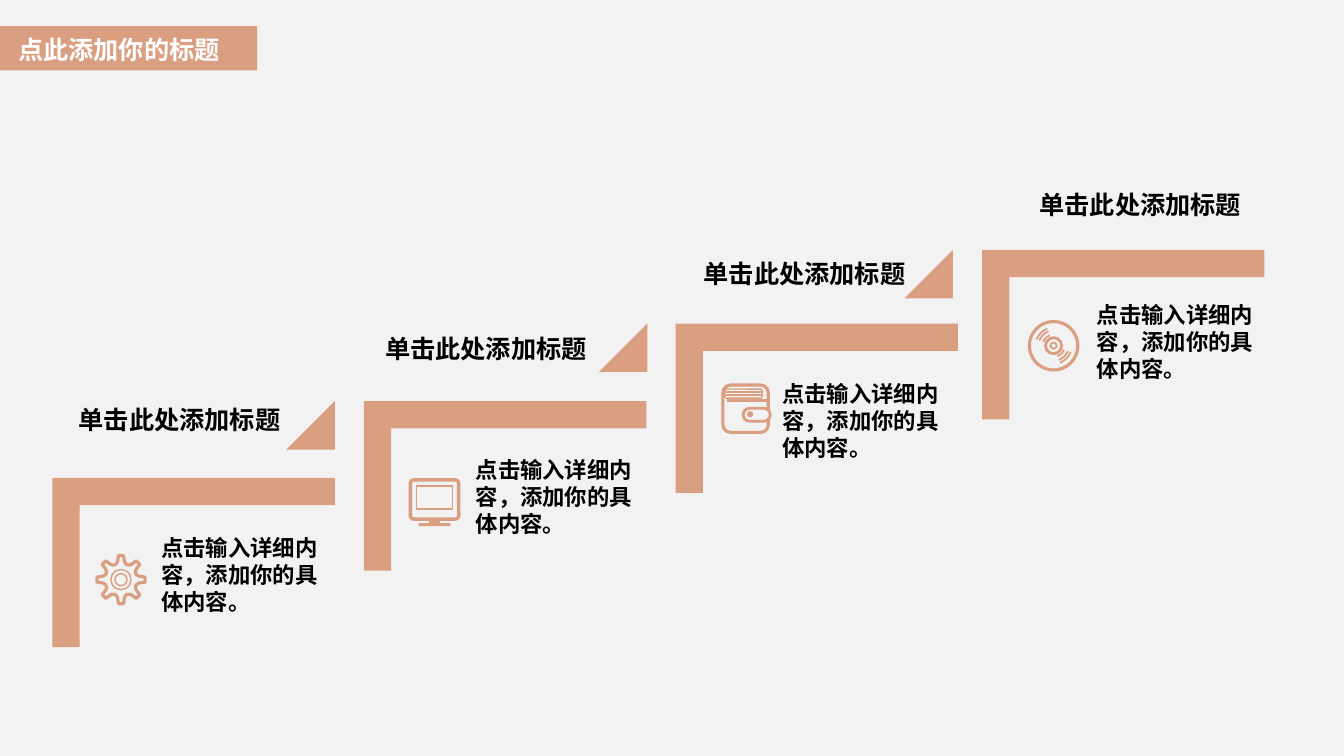
from math import cos, radians, sin

from lxml.etree import SubElement
from pptx import Presentation
from pptx.dml.color import RGBColor
from pptx.enum.shapes import MSO_CONNECTOR as Link, MSO_SHAPE as Kind
from pptx.enum.text import MSO_ANCHOR as Anchor, PP_ALIGN as Align
from pptx.oxml.ns import qn
from pptx.util import Inches, Pt

FONT = "Noto Sans CJK JP"
CLAY = "DA9E80"
PAPER = "F2F2F2"
BLACK = "000000"
WHITE = "FFFFFF"
HEADING = "单击此处添加标题"
DETAIL = "点击输入详细内容，添加你的具体内容。"


def colour(hex_string):
    return RGBColor.from_string(hex_string)


def paint(shape, fill=CLAY, line_width=0):
    shape.shadow.inherit = False
    if fill:
        shape.fill.solid()
        shape.fill.fore_color.rgb = colour(fill)
    else:
        shape.fill.background()
    if line_width:
        shape.line.color.rgb = colour(CLAY)
        shape.line.width = Pt(line_width)
    else:
        shape.line.fill.background()


def add_preset(page, kind, box, fill=CLAY, line_width=0, adjust=()):
    shape = page.shapes.add_shape(kind, *map(Inches, box))
    for index, value in enumerate(adjust):
        shape.adjustments[index] = value
    paint(shape, fill, line_width)
    return shape


def add_circle(page, x, y, radius, fill=None, line_width=0):
    box = (x - radius, y - radius, 2 * radius, 2 * radius)
    add_preset(page, Kind.OVAL, box, fill, line_width)


def add_rule(page, left, right, y, line_width):
    rule = page.shapes.add_connector(
        Link.STRAIGHT, Inches(left), Inches(y), Inches(right), Inches(y))
    rule.line.color.rgb = colour(CLAY)
    rule.line.width = Pt(line_width)
    SubElement(rule._element.spPr, qn("a:effectLst"))


def write(frame, text, size, hex_string, align, spacing=1.0):
    para = frame.paragraphs[0]
    para.alignment = align
    para.line_spacing = spacing
    span = para.add_run()
    span.text = text
    span.font.size = Pt(size)
    span.font.bold = True
    span.font.color.rgb = colour(hex_string)
    span.font.name = FONT
    SubElement(span.font._element, qn("a:ea"), typeface=FONT)


def add_text(page, box, text, size, align, spacing=1.0):
    frame = page.shapes.add_textbox(*map(Inches, box)).text_frame
    frame.word_wrap = True
    write(frame, text, size, BLACK, align, spacing)


def add_title(page, text):
    band = add_preset(page, Kind.RECTANGLE, (0, 0.26, 2.55, 0.44))
    title = page.shapes.title
    band._element.addnext(title._element)
    title.left, title.top, title.width, title.height = map(
        Inches, (0.08, 0.29, 2.38, 0.4))
    title.text_frame.word_wrap = True
    title.text_frame.vertical_anchor = Anchor.TOP
    write(title.text_frame, text, 18, WHITE, Align.JUSTIFY)


def add_step(page, left, top, heading_at, detail_at):
    width, height = 2.8, 1.68
    box = (left + (width - height) / 2, top - (width - height) / 2, height, width)
    corner = add_preset(page, Kind.CORNER, box, adjust=(0.161, 0.161))
    corner.rotation = 90
    add_text(page, (*heading_at, 2.26, 0.56), HEADING, 18, Align.CENTER, 1.5)
    add_text(page, (*detail_at, 1.94, 0.91), DETAIL, 16, Align.LEFT)


def add_gear(page, x, y):
    tooth = ((-19, 0.16), (-11, 0.18), (-6, 0.24), (6, 0.24), (11, 0.18), (19, 0.16))
    outline = [
        (Inches(x + radius * cos(radians(turn + angle))),
         Inches(y + radius * sin(radians(turn + angle))))
        for turn in range(0, 360, 45) for angle, radius in tooth]
    builder = page.shapes.build_freeform(*outline[0])
    builder.add_line_segments(outline[1:], close=True)
    paint(builder.convert_to_shape(), None, 2.25)
    add_circle(page, x, y, 0.1, line_width=1)
    add_circle(page, x, y, 0.06, line_width=1)


def add_monitor(page, left, top):
    add_preset(page, Kind.ROUNDED_RECTANGLE,
               (left + 0.02, top + 0.02, 0.48, 0.39), None, 2.5, (0.09,))
    add_preset(page, Kind.RECTANGLE, (left + 0.08, top + 0.08, 0.36, 0.23), None, 1)
    add_preset(page, Kind.TRAPEZOID, (left + 0.2, top + 0.41, 0.12, 0.05))
    add_preset(page, Kind.ROUNDED_RECTANGLE,
               (left + 0.1, top + 0.45, 0.32, 0.03), adjust=(0.5,))


def add_wallet(page, left, top):
    add_preset(page, Kind.ROUNDED_RECTANGLE,
               (left + 0.02, top + 0.02, 0.45, 0.47), None, 2.25, (0.17,))
    add_preset(page, Kind.ROUNDED_RECTANGLE,
               (left + 0.04, top + 0.06, 0.37, 0.09), None, 1, (0.2,))
    for offset in (0.09, 0.12):
        add_rule(page, left + 0.05, left + 0.41, top + offset, 1)
    add_rule(page, left + 0.06, left + 0.46, top + 0.17, 2)
    add_preset(page, Kind.ROUNDED_RECTANGLE,
               (left + 0.22, top + 0.25, 0.27, 0.13), PAPER, 2, (0.5,))
    add_circle(page, left + 0.29, top + 0.31, 0.03, CLAY)


def add_disc(page, x, y):
    add_circle(page, x, y, 0.24, line_width=2.25)
    add_circle(page, x, y, 0.08, line_width=2)
    add_circle(page, x, y, 0.03, line_width=1.25)
    for radius in (0.11, 0.15, 0.18):
        for start in (20, 200):
            box = (x - radius, y - radius, 2 * radius, 2 * radius)
            angles = (start * 0.6, (start + 50) * 0.6)
            add_preset(page, Kind.ARC, box, None, 1.25, angles)


def main():
    deck = Presentation()
    deck.slide_width = Inches(13.33)
    deck.slide_height = Inches(7.5)
    page = deck.slides.add_slide(deck.slide_layouts[5])
    page.background.fill.solid()
    page.background.fill.fore_color.rgb = colour(PAPER)

    add_title(page, "点此添加你的标题")
    steps = (
        (0.52, 4.74, (0.65, 3.81), (1.5, 5.25)),
        (3.61, 3.98, (3.69, 3.11), (4.62, 4.48)),
        (6.7, 3.21, (6.85, 2.36), (7.66, 3.72)),
        (9.74, 2.48, (10.18, 1.68), (10.78, 2.94)),
    )
    for step in steps:
        add_step(page, *step)
    for left, top in ((2.84, 3.98), (5.94, 3.21), (8.97, 2.48)):
        add_preset(page, Kind.ISOSCELES_TRIANGLE, (left, top, 0.48, 0.48), adjust=(1,))

    add_gear(page, 1.2, 5.75)
    add_monitor(page, 4.05, 4.74)
    add_wallet(page, 7.15, 3.8)
    add_disc(page, 10.45, 3.43)
    deck.save("out.pptx")


if __name__ == "__main__":
    main()
